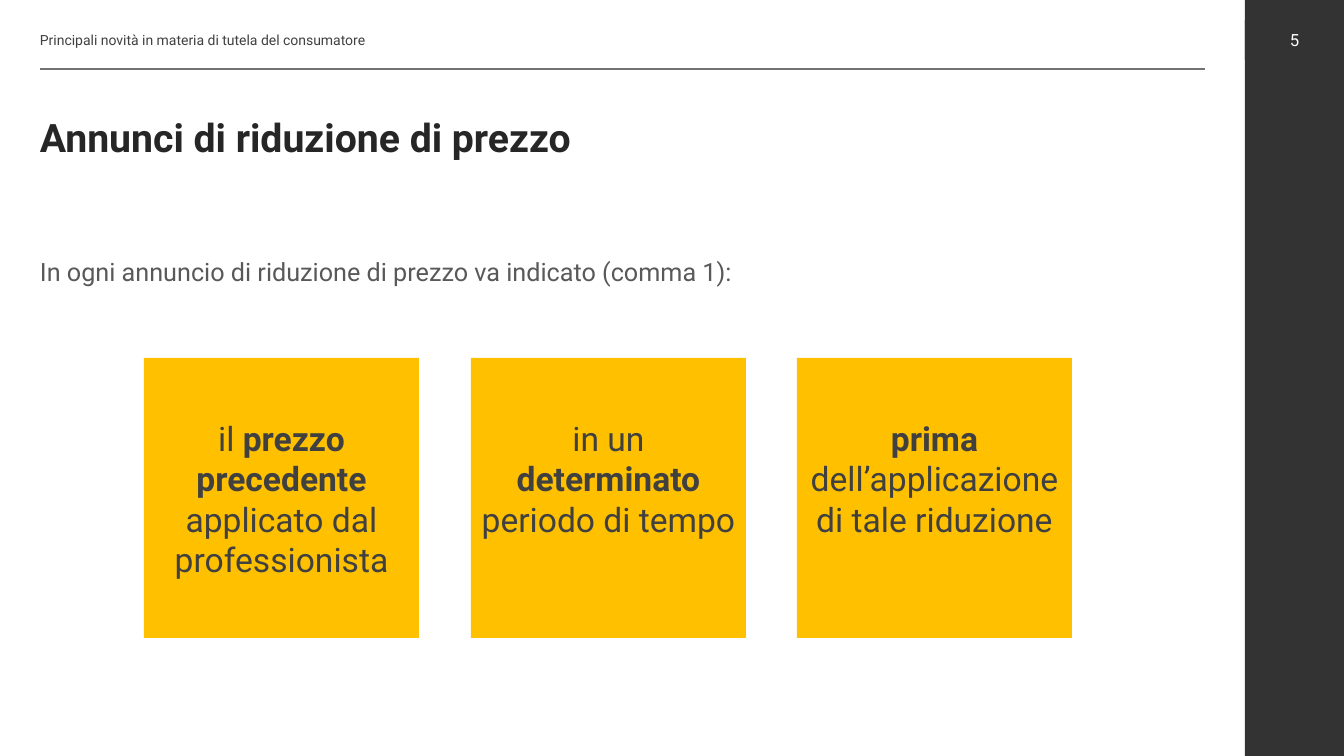
from dataclasses import dataclass

from lxml.etree import SubElement
from pptx import Presentation
from pptx.dml.color import RGBColor
from pptx.enum.shapes import MSO_CONNECTOR, MSO_SHAPE
from pptx.enum.text import MSO_ANCHOR, PP_ALIGN
from pptx.oxml.ns import qn
from pptx.util import Pt


@dataclass(frozen=True)
class Theme:
    font: str = "Roboto"
    dark: str = "333333"
    rule: str = "737373"
    title: str = "262626"
    body: str = "595959"
    text: str = "404040"
    white: str = "FFFFFF"
    card: str = "FFC000"
    header_size: int = 10
    number_size: int = 12
    body_size: int = 18
    card_size: int = 24
    title_size: int = 28


T = Theme()
PX = 914400 / 100.8


def px(n):
    return round(n * PX)


def write(sp, runs, size, color, align=PP_ALIGN.LEFT, anchor=MSO_ANCHOR.TOP,
          spacing=1.0, side=0, top=0):
    """Fill a shape with one paragraph of (text, bold) runs."""
    tf = sp.text_frame
    tf.word_wrap = True
    tf.vertical_anchor = anchor
    tf.margin_left = tf.margin_right = px(side)
    tf.margin_top, tf.margin_bottom = px(top), 0
    p = tf.paragraphs[0]
    p.alignment, p.line_spacing = align, spacing
    for text, bold in runs:
        r = p.add_run()
        r.text = text
        r.font.name, r.font.size, r.font.bold = T.font, Pt(size), bold
        r.font.color.rgb = RGBColor.from_string(color)


prs = Presentation()
prs.slide_width, prs.slide_height = px(1344), px(756)
s = prs.slides.add_slide(prs.slide_layouts[6])

# Side band with the page number, then the three cards
blocks = [
    (1245, 0, 99, 756, T.dark),
    (1245, 20, 99, 40, T.dark),
    *[(144 + 326 * i + (i > 0), 358, 275, 280, T.card) for i in range(3)],
]
shapes = []
for x, y, w, h, fill in blocks:
    sp = s.shapes.add_shape(MSO_SHAPE.RECTANGLE, px(x), px(y), px(w), px(h))
    sp.shadow.inherit = False
    sp.fill.solid()
    sp.fill.fore_color.rgb = RGBColor.from_string(fill)
    sp.line.fill.background()
    shapes.append(sp)
band, number, *cards = shapes

write(number, [("5", False)], T.number_size, T.white,
      PP_ALIGN.CENTER, MSO_ANCHOR.MIDDLE)

card_runs = [
    [("il ", False), ("prezzo precedente ", True),
     ("applicato dal professionista", False)],
    [("in un ", False), ("determinato", True), (" periodo di tempo", False)],
    [("prima", True), (" dell’applicazione di tale riduzione", False)],
]
for card, runs in zip(cards, card_runs):
    write(card, runs, T.card_size, T.text, PP_ALIGN.CENTER, side=10, top=60)

# Header, title and introduction
header = s.shapes.add_textbox(px(40), px(20), px(1165), px(40))
write(header, [("Principali novità in materia di tutela del consumatore", False)],
      T.header_size, T.text, anchor=MSO_ANCHOR.MIDDLE)

rule = s.shapes.add_connector(MSO_CONNECTOR.STRAIGHT, px(40), px(69), px(1205), px(69))
rule.line.color.rgb = RGBColor.from_string(T.rule)
rule.line.width = Pt(1)
SubElement(rule._element.spPr, qn("a:effectLst"))

title = s.shapes.add_textbox(px(40), px(119), px(1165), px(42))
write(title, [("Annunci di riduzione di prezzo", True)],
      T.title_size, T.title, spacing=0.9)

intro = s.shapes.add_textbox(px(40), px(241), px(1165), px(45))
write(intro, [("In ogni annuncio di riduzione di prezzo va indicato (comma 1):", False)],
      T.body_size, T.body, PP_ALIGN.JUSTIFY, spacing=1.5)

prs.save("out.pptx")
